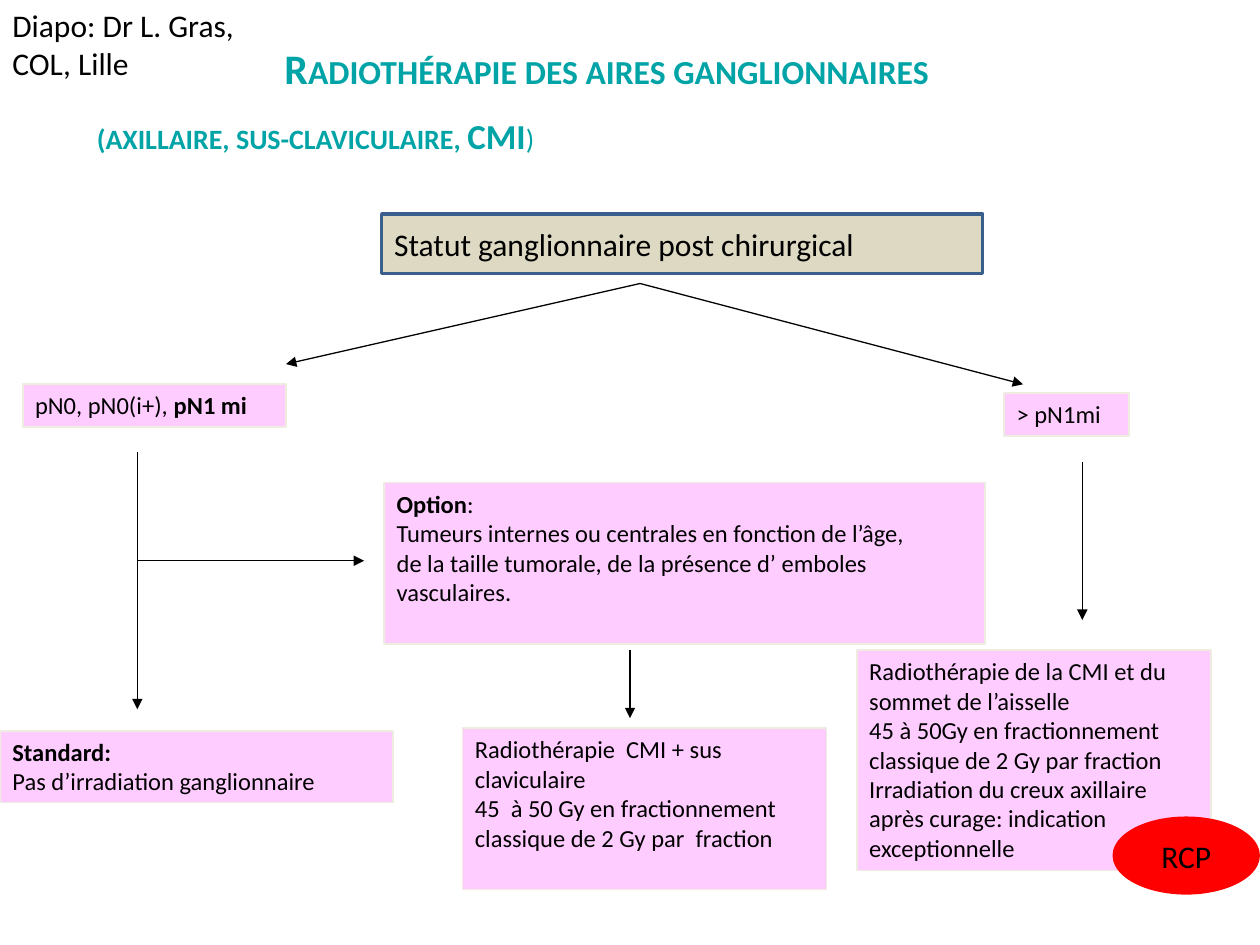
import pptx
import pptx.dml.color
import pptx.enum.shapes
import pptx.enum.text
import pptx.util
from lxml import etree
from pptx.oxml.ns import qn

SHAPE = pptx.enum.shapes.MSO_SHAPE
ANCHOR = pptx.enum.text.MSO_ANCHOR
ALIGN = pptx.enum.text.PP_ALIGN

THEME = {
    "font": "Calibri",
    "title": "00A4A7", "text": "000000",
    "note": "FFCCFF", "note_edge": "EEECE1",
    "start": "DDD9C3", "start_edge": "3A5F8C",
    "alert": "FF0000",
    "size_title": 24, "size_subtitle": 20, "size_label": 18, "size_note": 14,
}

# The slide is a grid of square cells
COLUMNS, ROWS = 100, 75
CELL = pptx.util.Inches(10) / COLUMNS

# Content: a paragraph is a list of (text, bold) spans
CREDIT = [[("Diapo: Dr L. Gras, COL, Lille", False)]]
TITLE = [[("Radiothérapie des aires ganglionnaires", True)]]
SUBTITLE = [[("(axillaire, sus-claviculaire, CMI", True), (")", False)]]
START = [[("Statut ganglionnaire post chirurgical", False)]]
ALERT = [[("RCP", False)]]

# Decision notes: (left, top, width, height) in cells, wrap, paragraphs
NOTES = [
    ((1.8, 30.5, 20.9, 3.4), False,
     [[("pN0, pN0(i+), ", False), ("pN1 mi", True)]]),
    ((79.7, 31.2, 9.9, 3.4), False, [[("> pN1mi", False)]]),
    ((68, 51.6, 28.1, 17.5), True, [
        [("Radiothérapie de la CMI et du sommet de l’aisselle", False)],
        [("45 à 50Gy en fractionnement classique de 2 Gy par fraction", False)],
        [("Irradiation du creux axillaire", False)],
        [("après curage: indication exceptionnelle", False)]]),
    ((0, 58, 31.2, 5.7), True, [
        [("Standard:", True)],
        [("Pas d’irradiation ganglionnaire", False)]]),
    ((30.5, 38.3, 47.7, 12.8), True, [
        [("Option", True), (":", False)],
        [("Tumeurs internes ou centrales en fonction de l’âge,", False)],
        [("de la taille tumorale, de la présence d’ emboles vasculaires.", False)]]),
    ((36.7, 57.8, 28.9, 12.8), True, [
        [("Radiothérapie  CMI + sus claviculaire", False)],
        [("45  à 50 Gy en fractionnement", False)],
        [("classique de 2 Gy par  fraction", False)]]),
]

# Arrows: start and end points in cells
FORK = (50.8, 22.5)
TRUNK = 10.9
ARROWS = [
    (FORK, (81.2, 30.5)),
    (FORK, (22.7, 28.9)),
    ((50, 51.6), (50, 57)),
    ((85.9, 36.7), (85.9, 49.2)),
    ((TRUNK, 35.9), (TRUNK, 56.3)),
    ((TRUNK, 44.5), (28.9, 44.5)),
]


def cells(values):
    return [round(value * CELL) for value in values]


def colour(name):
    return pptx.dml.color.RGBColor.from_string(THEME[name])


def write(box, paragraphs, size, ink="text", align=ALIGN.LEFT,
          anchor=ANCHOR.TOP, wrap=True):
    frame = box.text_frame
    frame.word_wrap = wrap
    frame.vertical_anchor = anchor
    frame.text = "\n".join("".join(text for text, _ in spans) for spans in paragraphs)
    for para, spans in zip(frame.paragraphs, paragraphs):
        para.alignment = align
        para.text = spans[0][0]
        for text, _ in spans[1:]:
            para.add_run().text = text
        for span, (_, bold) in zip(para.runs, spans):
            span.font.name = THEME["font"]
            span.font.size = pptx.util.Pt(THEME[size])
            span.font.bold = bold
            span.font.color.rgb = colour(ink)
    return frame


def add_panel(page, kind, area, fill, edge=None, width=1):
    panel = page.shapes.add_shape(kind, *cells(area))
    panel.shadow.inherit = False
    panel.fill.solid()
    panel.fill.fore_color.rgb = colour(fill)
    if edge:
        panel.line.color.rgb = colour(edge)
        panel.line.width = pptx.util.Pt(width)
    else:
        panel.line.fill.background()
    return panel


def add_arrow(page, start, end):
    arrow = page.shapes.add_connector(
        pptx.enum.shapes.MSO_CONNECTOR.STRAIGHT, *cells(start + end))
    arrow.line.color.rgb = colour("text")
    arrow.line.width = pptx.util.Pt(0.75)
    etree.SubElement(arrow.line._get_or_add_ln(), qn("a:tailEnd"), type="triangle")
    etree.SubElement(arrow._element.spPr, qn("a:effectLst"))


def add_title(page):
    box = page.shapes.add_textbox(*cells((6.7, 2.9, 82.9, 9.4)))
    frame = write(box, TITLE + SUBTITLE, "size_title", "title")
    heading, subheading = frame.paragraphs
    heading.alignment = ALIGN.CENTER
    subheading.space_before = pptx.util.Pt(12)
    for span in subheading.runs:
        span.font.size = pptx.util.Pt(THEME["size_subtitle"])
    for span in heading.runs + subheading.runs:
        span.font._element.set("cap", "small")


def main():
    deck = pptx.Presentation()
    deck.slide_width, deck.slide_height = cells((COLUMNS, ROWS))
    page = deck.slides.add_slide(deck.slide_layouts[6])

    add_title(page)

    # Decision notes, then the alert that overlaps the last branch
    for area, wrap, paragraphs in NOTES:
        note = add_panel(page, SHAPE.RECTANGLE, area, "note", "note_edge")
        write(note, paragraphs, "size_note", wrap=wrap)
    alert = add_panel(page, SHAPE.OVAL, (88.3, 64.8, 11.7, 6.2), "alert")
    write(alert, ALERT, "size_label", align=ALIGN.CENTER, anchor=ANCHOR.MIDDLE)

    # Starting point and the arrows of the tree
    start = add_panel(page, SHAPE.RECTANGLE, (30.3, 17, 47.7, 4.7),
                      "start", "start_edge", 2)
    write(start, START, "size_label", anchor=ANCHOR.MIDDLE)
    for origin, target in ARROWS:
        add_arrow(page, origin, target)

    # Credit in the corner
    credit = page.shapes.add_textbox(*cells((0, 0, 20, 7.1)))
    write(credit, CREDIT, "size_label")

    deck.save("out.pptx")


if __name__ == "__main__":
    main()
